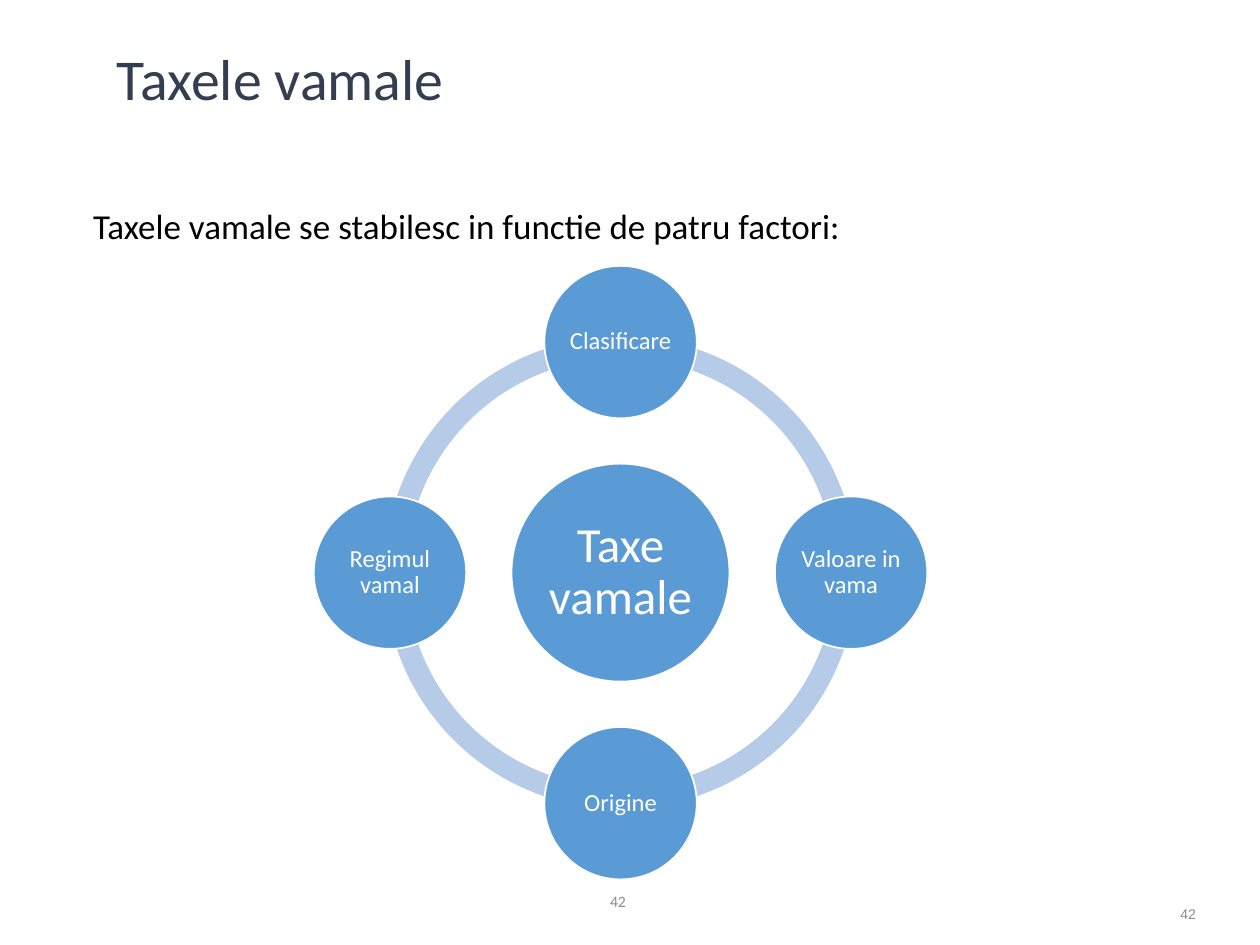
import math

import pptx
import pptx.dml.color
import pptx.enum.shapes
import pptx.enum.text
import pptx.util

COLS, ROWS = 10, 7.5
CELL = pptx.util.Inches(1)
KINDS = pptx.enum.shapes.MSO_SHAPE
ALIGN = pptx.enum.text.PP_ALIGN
ANCHOR = pptx.enum.text.MSO_ANCHOR
MID = (4.925, 4.545)
REACH = 1.83


def span(cells):
    """Turn grid cells into a slide length."""
    return round(cells * CELL)


def color(code):
    """Turn a hex string into a colour."""
    return pptx.dml.color.RGBColor.from_string(code)


def apply(item, **values):
    """Set each given value as an attribute of the item."""
    for name, value in values.items():
        setattr(item, name, value)


def write(shape, words, size, code, font="Calibri", align=ALIGN.LEFT,
          anchor=ANCHOR.TOP, line=None, inset=None):
    """Write one formatted paragraph into a shape."""
    frame = shape.text_frame
    apply(frame, word_wrap=True, vertical_anchor=anchor)
    if inset is not None:
        sides = ("left", "top", "right", "bottom")
        apply(frame, **{f"margin_{side}": span(inset) for side in sides})
    para = frame.paragraphs[0]
    apply(para, text=words, alignment=align, line_spacing=line)
    apply(para.font, name=font, size=pptx.util.Pt(size))
    para.font.color.rgb = color(code)


def label(slide, box, words, size, code, **style):
    """Add a text box on the grid."""
    shape = slide.shapes.add_textbox(*map(span, box))
    write(shape, words, size, code, **style)


def solid(slide, kind, mid, width, fill):
    """Add a filled square-bounded shape around a centre point."""
    left, top = (span(place - width / 2) for place in mid)
    shape = slide.shapes.add_shape(kind, left, top, span(width), span(width))
    shape.shadow.inherit = False
    shape.fill.solid()
    shape.fill.fore_color.rgb = color(fill)
    return shape


def arc(slide, turn):
    """Add one quarter of the ring, starting at the given quarter turn."""
    shape = solid(slide, KINDS.BLOCK_ARC, MID, 3.75, "B5CBE7")
    shape.line.fill.background()
    ends = (turn * 54, (turn + 1) % 4 * 54, 0.046)
    for index, value in enumerate(ends):
        shape.adjustments[index] = value


def disc(slide, mid, width, words, size, inset):
    """Add a labelled circle with a white rim."""
    shape = solid(slide, KINDS.OVAL, mid, width, "5B9BD5")
    shape.line.color.rgb = color("FFFFFF")
    shape.line.width = pptx.util.Pt(1)
    write(shape, words, size, "FFFFFF", align=ALIGN.CENTER,
          anchor=ANCHOR.MIDDLE, line=0.9, inset=inset)


def wheel(slide, hub, nodes):
    """Add the ring, its hub and evenly spaced nodes from the top."""
    for turn in (2, 1, 0, 3):
        arc(slide, turn)
    disc(slide, MID, 1.73, hub, 28, 0.04)
    for index, words in enumerate(nodes):
        angle = math.tau * index / len(nodes)
        mid = (MID[0] + REACH * math.sin(angle),
               MID[1] - REACH * math.cos(angle))
        disc(slide, mid, 1.21, words, 14, 0.02)


def main():
    """Build and save the slide."""
    deck = pptx.Presentation()
    apply(deck, slide_width=span(COLS), slide_height=span(ROWS))
    slide = deck.slides.add_slide(deck.slide_layouts[6])
    label(slide, (0.64, 1.57, 8.58, 0.42),
          "Taxele vamale se stabilesc in functie de patru factori:",
          20, "000000")
    label(slide, (0.83, 0.33, 8.58, 0.64), "Taxele vamale", 33, "333F50",
          anchor=ANCHOR.MIDDLE, line=0.9)
    label(slide, (8.72, 7.14, 0.87, 0.28), "42", 8, "8C8C8C",
          font="Arial", align=ALIGN.RIGHT)
    wheel(slide, "Taxe vamale",
          ("Clasificare", "Valoare in vama", "Origine", "Regimul vamal"))
    label(slide, (4.24, 6.95, 1.33, 0.4), "42", 9, "8C8C8C",
          align=ALIGN.CENTER, anchor=ANCHOR.MIDDLE)
    deck.save("out.pptx")


if __name__ == "__main__":
    main()
